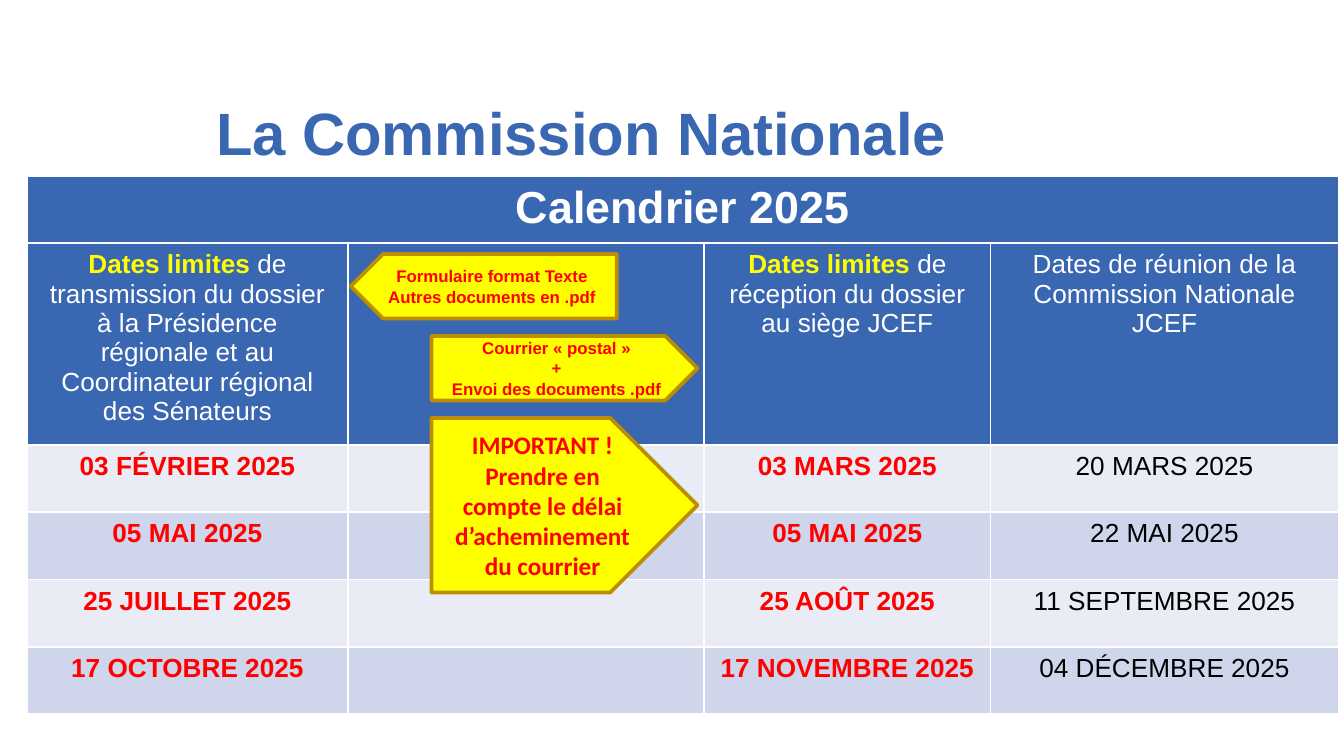
import dataclasses

import lxml.etree
import pptx
import pptx.dml.color
import pptx.enum.shapes
import pptx.enum.text
import pptx.oxml.ns
import pptx.util

Inches = pptx.util.Inches
CENTER = pptx.enum.text.PP_ALIGN.CENTER
MIDDLE = pptx.enum.text.MSO_ANCHOR.MIDDLE


@dataclasses.dataclass(frozen=True)
class Theme:
    blue: str = "3A67B1"
    white: str = "FFFFFF"
    yellow: str = "FFFF00"
    red: str = "FF0000"
    black: str = "000000"
    gold: str = "BC8E00"
    bands: tuple = ("E9EBF5", "CFD5EA")
    font: str = "Arial"
    callout_font: str = "Calibri"
    title_size: float = 32
    heading_size: float = 24
    table_size: float = 14
    callout_size: float = 13.5
    note_size: float = 9


THEME = Theme()

HEADERS = (
    ("Dates limites ", "de transmission du dossier à la Présidence régionale "
     "et au Coordinateur régional des Sénateurs"),
    None,
    ("Dates limites ", "de réception du dossier au siège JCEF"),
    ("", "Dates de réunion de la Commission Nationale JCEF"),
)
DATES = (
    ("03 FÉVRIER 2025", "03 MARS 2025", "20 MARS 2025"),
    ("05 MAI 2025", "05 MAI 2025", "22 MAI 2025"),
    ("25 JUILLET 2025", "25 AOÛT 2025", "11 SEPTEMBRE 2025"),
    ("17 OCTOBRE 2025", "17 NOVEMBRE 2025", "04 DÉCEMBRE 2025"),
)


def rgb(value):
    return pptx.dml.color.RGBColor.from_string(value)


def add_element(parent, tag, **values):
    return lxml.etree.SubElement(parent, pptx.oxml.ns.qn(tag), **values)


def set_fill(target, color):
    target.fill.solid()
    target.fill.fore_color.rgb = rgb(color)


def add_span(para, text, size, color, bold=True, font=THEME.font):
    span = para.add_run()
    span.text = text
    values = {"size": pptx.util.Pt(size), "bold": bold, "name": font}
    for name, value in values.items():
        setattr(span.font, name, value)
    span.font.color.rgb = rgb(color)


def add_title(page):
    box = page.shapes.add_textbox(Inches(1.51), Inches(0.71), Inches(7.8), Inches(0.61))
    frame = box.text_frame
    frame.word_wrap = True
    frame.vertical_anchor = MIDDLE
    para = frame.paragraphs[0]
    para.line_spacing = 0.9
    add_span(para, "La Commission Nationale", THEME.title_size, THEME.blue)


def format_cell(cell, color):
    properties = cell._tc.get_or_add_tcPr()
    for side in ("a:lnL", "a:lnR", "a:lnT", "a:lnB"):
        line = add_element(properties, side, w="12192")
        add_element(add_element(line, "a:solidFill"), "a:srgbClr", val=THEME.white)
    set_fill(cell, color)
    cell.text_frame.paragraphs[0].alignment = CENTER


def set_empty_size(cell, size):
    para = cell.text_frame.paragraphs[0]
    ending = add_element(para._p, "a:endParaRPr", sz=str(size * 100))
    add_element(ending, "a:latin", typeface=THEME.font)


def add_calendar(page):
    widths = (2.39, 2.65, 2.13, 2.59)
    heights = (0.47, 1.41) + (0.32,) * len(DATES)
    holder = page.shapes.add_table(
        len(heights), len(widths), Inches(0.2), Inches(1.31),
        Inches(sum(widths)), Inches(sum(heights)))
    table = holder.table
    for column, width in zip(table.columns, widths):
        column.width = Inches(width)
    for row, height in zip(table.rows, heights):
        row.height = Inches(height)
    holder.width = holder.height = Inches(3.28)

    colors = (THEME.blue,) * 2 + THEME.bands * 2
    for row, color in zip(table.rows, colors):
        for cell in row.cells:
            format_cell(cell, color)

    heading = table.cell(0, 0)
    heading.merge(table.cell(0, len(widths) - 1))
    add_span(heading.text_frame.paragraphs[0], "Calendrier 2025",
             THEME.heading_size, THEME.white)

    for column, header in enumerate(HEADERS):
        if header:
            para = table.cell(1, column).text_frame.paragraphs[0]
            emphasis, label = header
            if emphasis:
                add_span(para, emphasis, THEME.table_size, THEME.yellow)
            add_span(para, label, THEME.table_size, THEME.white, bold=False)

    for row, dates in enumerate(DATES, start=2):
        set_empty_size(table.cell(row, 1), THEME.heading_size)
        for column, date in zip((0, 2, 3), dates):
            deadline = column != 3
            color = THEME.red if deadline else THEME.black
            add_span(table.cell(row, column).text_frame.paragraphs[0], date,
                     THEME.table_size, color, bold=deadline)


def add_arrow(page, left, top, height, lines, size, font=THEME.font, flipped=False):
    arrow = page.shapes.add_shape(
        pptx.enum.shapes.MSO_SHAPE.PENTAGON,
        Inches(left), Inches(top), Inches(1.98), Inches(height))
    arrow.shadow.inherit = False
    set_fill(arrow, THEME.yellow)
    arrow.line.color.rgb = rgb(THEME.gold)
    arrow.line.width = pptx.util.Pt(2)
    if flipped:
        arrow._element.spPr.xfrm.set("flipH", "1")
    frame = arrow.text_frame
    frame.word_wrap = True
    frame.vertical_anchor = MIDDLE
    for index, text in enumerate(lines):
        para = frame.add_paragraph() if index else frame.paragraphs[0]
        para.alignment = CENTER
        add_span(para, text, size, THEME.red, font=font)


def main():
    deck = pptx.Presentation()
    deck.slide_width = Inches(10)
    deck.slide_height = Inches(10 * 9 / 16)
    page = deck.slides.add_slide(deck.slide_layouts[6])
    add_title(page)
    add_calendar(page)
    add_arrow(page, 3.21, 3.11, 1.3,
              ("IMPORTANT !", "Prendre en compte le délai d’acheminement du courrier"),
              THEME.callout_size, font=THEME.callout_font)
    add_arrow(page, 3.21, 2.5, 0.48,
              ("Courrier « postal »", "+", "Envoi des documents .pdf"), THEME.note_size)
    add_arrow(page, 2.61, 1.89, 0.48,
              ("Formulaire format Texte", "Autres documents en .pdf"),
              THEME.note_size, flipped=True)
    deck.save("out.pptx")


if __name__ == "__main__":
    main()
